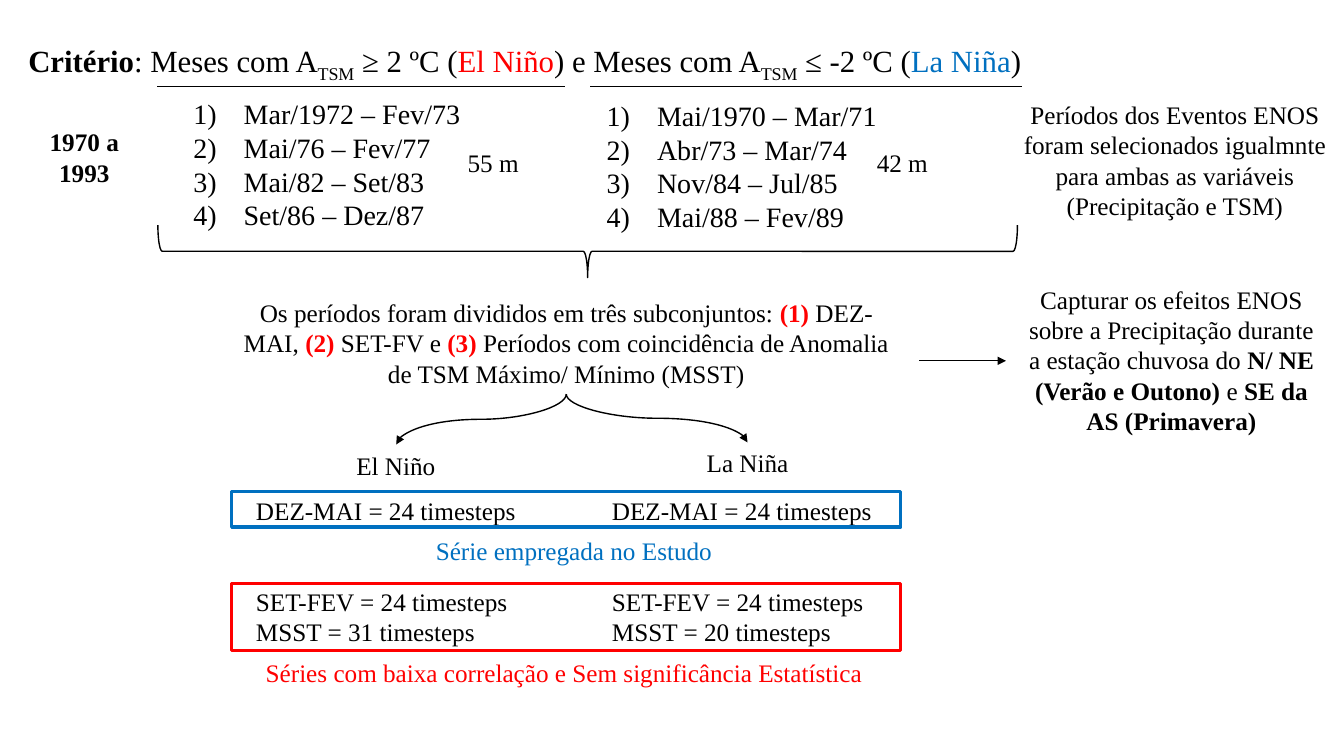
"""Build the slide on the criteria for selecting El Niño and La Niña months."""
from lxml import etree
from pptx import Presentation
from pptx import util as u
from pptx.dml.color import RGBColor
from pptx.enum import shapes, text
from pptx.oxml import ns

COLORS = {"black": "000000", "red": "FF0000", "blue": "0070C0"}
FONT = "Times New Roman"
BODY_SIZE = 18
LINE_HEIGHT = 21.7
ALIGN = text.PP_ALIGN

TITLE = [
    ("Critério", "bold"), (": Meses com A", ""), ("TSM", "sub"), (" ≥ 2 ºC (", ""),
    ("El Niño", "red"), (") e Meses com A", ""), ("TSM", "sub"), (" ≤ -2 ºC (", ""),
    ("La Niña", "blue"), (")", ""),
]
TITLE_BOX = (13, 26, 934.5, 37.5)

EVENT_LISTS = [
    ((131, 67.5, 222, 99.5),
     ["Mar/1972 – Fev/73", "Mai/76 – Fev/77", "Mai/82 – Set/83", "Set/86 – Dez/87"]),
    ((426.25, 68.75, 222, 99.5),
     ["Mai/1970 – Mar/71", "Abr/73 – Mar/74", "Nov/84 – Jul/85", "Mai/88 – Fev/89"]),
]

CENTERED_TEXTS = [
    ((718.5, 67.5, 241.5, 94.5),
     [("Períodos dos Eventos ENOS foram selecionados igualmnte para ambas as variáveis "
       "(Precipitação e TSM)", "")]),
    ((165.5, 209, 478, 72.5),
     [("Os períodos foram divididos em três subconjuntos: ", ""), ("(1) ", "bold red"),
      ("DEZ-MAI, ", ""), ("(2) ", "bold red"), ("SET-FV e ", ""), ("(3) ", "bold red"),
      ("Períodos com coincidência de Anomalia de TSM Máximo/ Mínimo (MSST)", "")]),
    ((726.5, 199.5, 220.5, 116.5),
     [("Capturar os efeitos ENOS sobre a Precipitação durante a estação chuvosa do ", ""),
      ("N/ NE (Verão e Outono)", "bold"), (" e ", ""), ("SE da AS (Primavera)", "bold")]),
    ((234.75, 317.75, 96, 29), [("El Niño", "")]),
    ((486, 316, 96, 29), [("La Niña", "")]),
    ((172, 466, 462, 29),
     [("Séries com baixa correlação e Sem significância Estatística", "red")]),
    ((179, 379, 462, 29), [("Série empregada no Estudo", "blue")]),
    ((325.5, 101.75, 53.5, 29), [("55 m", "")]),
    ((617.75, 101.75, 53.5, 29), [("42 m", "")]),
    ((13.5, 87, 93.5, 51), [("1970 a 1993", "bold")]),
]

TIMESTEPS = [
    ((175.75, 350, 214, 116.5),
     ["DEZ-MAI = 24 timesteps", "SET-FEV = 24 timesteps", "MSST = 31 timesteps"]),
    ((430, 350, 214, 116.5),
     ["DEZ-MAI = 24 timesteps", "SET-FEV = 24 timesteps", "MSST = 20 timesteps"]),
]

FRAMES = [((165.5, 351, 478, 25.5), "blue"), ((165.5, 416.75, 478, 47.75), "red")]
BRACE = (401, -127.5, 37.5, 614)
UNDERLINES = [((112.5, 62), (403.5, 62)), ((421.5, 62), (730, 62))]
EFFECT_ARROW = ((656.5, 257.75), (718.5, 257.75))
BRANCH_START = (404.5, 281.5)
BRANCH_ENDS = [(283, 317.5), (534, 316)]


def color(name):
    return RGBColor.from_string(COLORS[name])


def points(values):
    return [u.Pt(value) for value in values]


def write(para, spans, size=BODY_SIZE, align=ALIGN.CENTER):
    para.alignment = align
    para.line_spacing = 1.0
    for content, style in spans:
        words = style.split()
        span = para.add_run()
        span.text = content
        span.font.name = FONT
        span.font.size = u.Pt(size)
        span.font.bold = "bold" in words
        span.font.color.rgb = color(next((word for word in words if word in COLORS), "black"))
        if "sub" in words:
            span.font._element.set("baseline", "-25000")


def add_text(page, place, anchor=text.MSO_ANCHOR.TOP):
    frame = page.shapes.add_textbox(*points(place)).text_frame
    frame.word_wrap = True
    frame.vertical_anchor = anchor
    return frame


def paragraphs(frame, count):
    return [frame.paragraphs[0]] + [frame.add_paragraph() for _ in range(count - 1)]


def number(para):
    settings = para._p.get_or_add_pPr()
    settings.set("marL", str(u.Pt(36)))
    settings.set("indent", str(-u.Pt(36)))
    etree.SubElement(settings, ns.qn("a:buFont"), typeface="+mj-lt")
    etree.SubElement(settings, ns.qn("a:buAutoNum"), type="arabicParenR")


def add_outline(page, kind, place, line_color, width):
    shape = page.shapes.add_shape(kind, *points(place))
    shape.shadow.inherit = False
    shape.fill.background()
    shape.line.color.rgb = color(line_color)
    shape.line.width = u.Pt(width)
    return shape


def add_line(page, start, end, width=0.5, kind=shapes.MSO_CONNECTOR.STRAIGHT, arrow=False):
    line = page.shapes.add_connector(kind, *points(start + end))
    line.line.color.rgb = color("black")
    line.line.width = u.Pt(width)
    properties = line._element.spPr
    if arrow:
        etree.SubElement(properties.find(ns.qn("a:ln")), ns.qn("a:tailEnd"), type="triangle")
    etree.SubElement(properties, ns.qn("a:effectLst"))
    return line


def add_branch(page, start, end):
    across, down = end[0] - start[0], end[1] - start[1]
    middle_x, middle_y = start[0] + across / 2, start[1] + down / 2
    side = 1 if across < 0 else -1
    half_width, half_height = side * down / 2, abs(across) / 2
    branch = add_line(page, (middle_x - half_width, middle_y - half_height),
                      (middle_x + half_width, middle_y + half_height),
                      1, shapes.MSO_CONNECTOR.CURVE, True)
    turn = 90 if side > 0 else 270
    branch._element.spPr.find(ns.qn("a:xfrm")).set("rot", str(turn * 60000))


def main():
    deck = Presentation()
    deck.slide_width, deck.slide_height = u.Pt(960), u.Pt(540)
    page = deck.slides.add_slide(deck.slide_layouts[5])

    title = page.shapes.title
    title.left, title.top, title.width, title.height = points(TITLE_BOX)
    title.text_frame.auto_size = text.MSO_AUTO_SIZE.NONE
    title.text_frame.vertical_anchor = text.MSO_ANCHOR.MIDDLE
    write(title.text_frame.paragraphs[0], TITLE, 22, ALIGN.JUSTIFY)

    for start, end in UNDERLINES:
        add_line(page, start, end)
    for place, events in EVENT_LISTS:
        frame = add_text(page, place, text.MSO_ANCHOR.MIDDLE)
        for para, event in zip(paragraphs(frame, len(events)), events):
            write(para, [(event, "")], 20, ALIGN.JUSTIFY)
            number(para)

    brace = add_outline(page, shapes.MSO_SHAPE.RIGHT_BRACE, BRACE, "black", 1)
    brace.rotation = 90
    for place, spans in CENTERED_TEXTS:
        write(add_text(page, place).paragraphs[0], spans)

    add_line(page, *EFFECT_ARROW, arrow=True)
    for end in BRANCH_ENDS:
        add_branch(page, BRANCH_START, end)

    for place, rows in TIMESTEPS:
        paras = paragraphs(add_text(page, place), len(rows))
        for para, row in zip(paras, rows):
            write(para, [(row, "")], align=ALIGN.LEFT)
        paras[1].space_before = u.Pt(2 * LINE_HEIGHT)
    for place, line_color in FRAMES:
        add_outline(page, shapes.MSO_SHAPE.RECTANGLE, place, line_color, 2.25)

    deck.save("out.pptx")


if __name__ == "__main__":
    main()
